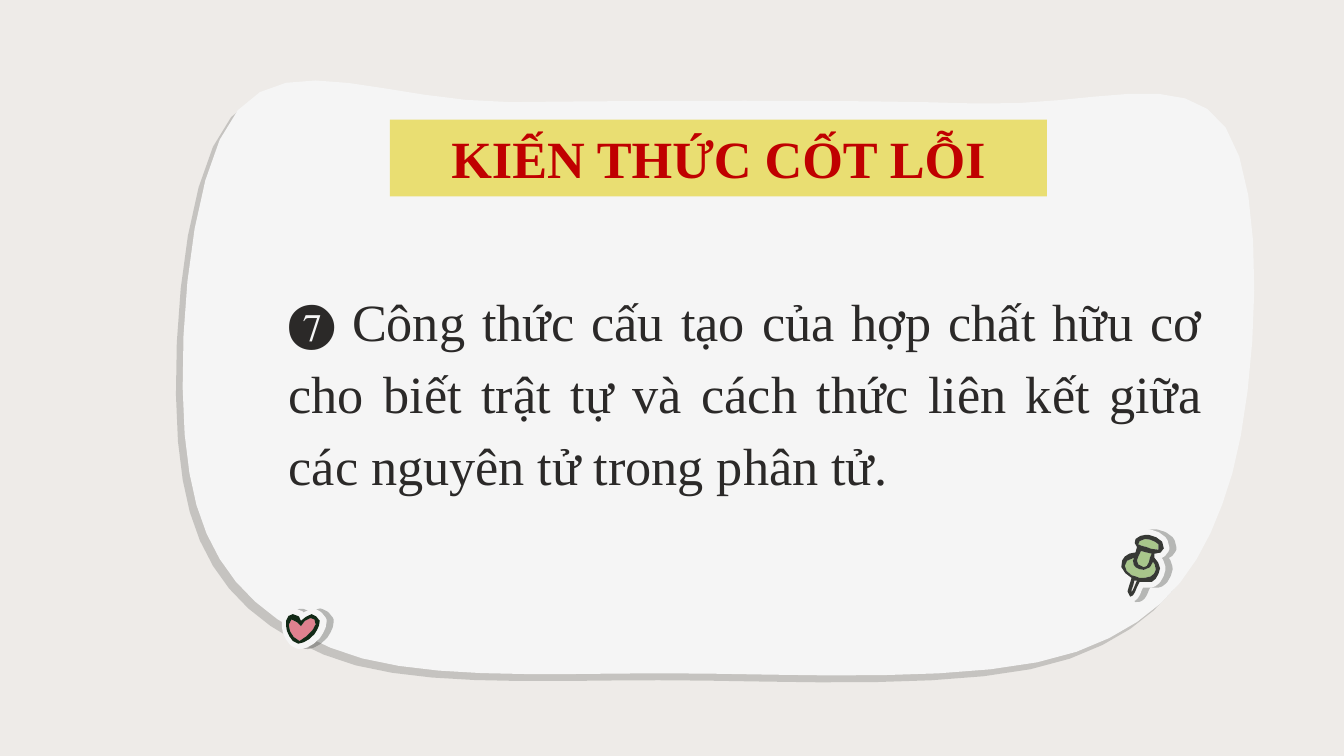
from dataclasses import dataclass
from math import ceil, dist

from lxml import etree
from pptx import Presentation
from pptx.dml.color import RGBColor
from pptx.enum.shapes import MSO_SHAPE
from pptx.enum.text import MSO_ANCHOR, MSO_AUTO_SIZE, PP_ALIGN
from pptx.oxml.ns import qn
from pptx.util import Pt

RECT = MSO_SHAPE.RECTANGLE
MIDDLE = MSO_ANCHOR.MIDDLE
GROW = MSO_AUTO_SIZE.SHAPE_TO_FIT_TEXT
CENTER, JUSTIFY = PP_ALIGN.CENTER, PP_ALIGN.JUSTIFY


@dataclass(frozen=True)
class Theme:
    back: str = "EEEBE8"
    paper: str = "F5F5F5"
    ink: str = "373935"
    green: str = "A8C68B"
    pink: str = "DF818E"
    edge: str = "122916"
    band: str = "E9DE72"
    title: str = "C00000"
    body: str = "2B2928"
    font: str = "Times New Roman"
    size: int = 28


THEME = Theme()
UNIT = 0.72  # points per drawing unit
PIECE = 5    # units per straight piece of a curve
MOST = 8     # pieces per curve at most

# Outlines: a start point, then cubic curves (two handles and an end)
CARD = [
    (141, 352), (152, 419, 187, 457, 246, 482), (305, 507, 403, 501, 495, 501),
    (588, 501, 731, 510, 801, 485), (871, 460, 898, 417, 917, 352),
    (935, 287, 944, 141, 912, 95), (880, 49, 814, 80, 725, 77),
    (637, 74, 472, 75, 380, 76), (289, 76, 217, 36, 177, 82),
    (137, 128, 129, 286, 141, 352),
]
PIN = [
    (20, 0), (18, 0, 15, 1, 13, 3), (12, 5, 12, 7, 14, 9),
    (14, 11, 14, 13, 13, 13), (8, 13, 4, 16, 3, 19), (0, 24, 5, 29, 10, 32),
    (9, 36, 8, 38, 7, 42), (7, 45, 8, 46, 9, 46), (10, 46, 10, 46, 11, 45),
    (13, 43, 13, 40, 16, 35), (18, 35, 22, 35, 25, 35), (27, 34, 29, 32, 30, 29),
    (33, 25, 30, 20, 27, 17), (26, 17, 26, 16, 27, 14), (31, 14, 33, 13, 34, 10),
    (35, 4, 28, 1, 23, 0), (22, 0, 21, 0, 20, 0),
]
DISC = [
    (12, 17), (8, 18, 4, 20, 5, 23), (5, 26, 7, 28, 10, 30),
    (13, 31, 14, 31, 16, 32), (19, 32, 21, 32, 24, 31), (26, 30, 28, 28, 28, 26),
    (28, 22, 27, 22, 26, 20), (25, 23, 23, 26, 19, 26), (16, 26, 15, 25, 13, 24),
    (12, 23, 11, 22, 11, 19), (11, 18, 11, 17, 12, 17),
]
SPIKE = [
    (12, 34), (12, 36, 11, 38, 10, 41), (10, 41, 10, 42, 10, 43),
    (11, 41, 12, 39, 14, 34), (13, 34, 13, 34, 12, 34),
]
CAP = [
    (20, 3), (17, 3, 14, 6, 15, 7), (16, 8, 18, 8, 21, 9),
    (23, 10, 26, 11, 30, 11), (32, 10, 32, 8, 30, 7), (28, 5, 24, 3, 20, 3),
]
NECK = [
    (17, 12), (16, 14, 14, 18, 14, 19), (13, 19, 13, 21, 15, 22),
    (16, 23, 18, 24, 19, 24), (21, 24, 22, 23, 23, 20), (23, 18, 24, 16, 25, 14),
    (23, 13, 19, 13, 17, 12),
]
HEART = [
    (6, 0), (2, 0, 0, 5, 1, 9), (1, 12, 3, 17, 6, 20), (7, 20, 9, 21, 10, 22),
    (11, 22, 13, 22, 14, 21), (16, 21, 20, 17, 22, 15), (24, 12, 26, 9, 26, 5),
    (25, 3, 22, 0, 20, 0), (17, 0, 14, 4, 12, 5), (12, 3, 10, 0, 6, 0),
]
CORE = [
    (19, 3), (17, 3, 16, 3, 15, 5), (14, 6, 13, 8, 12, 9), (11, 9, 10, 7, 9, 6),
    (8, 4, 7, 4, 5, 4), (4, 5, 3, 6, 3, 8), (3, 13, 6, 18, 11, 20),
    (18, 16, 26, 8, 22, 4), (21, 3, 20, 3, 19, 3),
]


def color(code):
    return RGBColor.from_string(code)


def trace(path, left, top):
    """Points along the curves of an outline, without the closing one."""
    x, y = path[0]
    spots = [(x, y)]
    for ax, ay, bx, by, ex, ey in path[1:]:
        steps = min(MOST, ceil(dist((x, y), (ex, ey)) / PIECE))
        for step in range(1, steps + 1):
            t = step / steps
            u = 1 - t
            p, q, r, s = u**3, 3 * u * u * t, 3 * u * t * t, t**3
            spots.append((p * x + q * ax + r * bx + s * ex,
                          p * y + q * ay + r * by + s * ey))
        x, y = ex, ey
    return [(Pt(left + px * UNIT), Pt(top + py * UNIT)) for px, py in spots[:-1]]


def add_shade(shape, alpha, reach, angle):
    effects = shape.element.spPr.find(qn("a:effectLst"))
    outer = etree.SubElement(effects, qn("a:outerShdw"), blurRad="0",
                             dist=str(Pt(reach)), dir=str(angle * 60000),
                             algn="bl", rotWithShape="0")
    tint = etree.SubElement(outer, qn("a:srgbClr"), val=THEME.ink)
    etree.SubElement(tint, qn("a:alpha"), val=str(alpha * 1000))


def add_form(shapes, paths, fill, left=0, top=0, rim=0):
    """Closed outline; any further paths are holes in it."""
    first, *holes = [trace(path, left, top) for path in paths]
    pen = shapes.build_freeform(*first[0], scale=1.0)
    pen.add_line_segments(first[1:], close=True)
    for hole in holes:
        pen.move_to(*hole[0])
        pen.add_line_segments(hole[1:], close=True)
    form = pen.convert_to_shape()
    form.shadow.inherit = False
    form.fill.solid()
    form.fill.fore_color.rgb = color(fill)
    if rim:
        form.line.color.rgb = color(THEME.paper)
        form.line.width = Pt(rim)
    else:
        form.line.fill.background()
    return form


def add_sticker(slide, rim, parts, ink, left, top, shift=0):
    """Pale rim with a shadow, coloured parts, then the ink around them."""
    group = slide.shapes.add_group_shape().shapes
    base = add_form(group, [rim], THEME.back, left + shift, top, rim=6)
    add_shade(base, 32, 3.8, 0)
    for path, fill in parts:
        add_form(group, [path], fill, left, top)
    holes = [path for path, _ in parts]
    add_form(group, [rim, *holes], ink, left, top)


def write(shape, text, tint, align, bold=False, space=None):
    frame = shape.text_frame
    frame.word_wrap = True
    frame.auto_size = GROW
    para = frame.paragraphs[0]
    para.alignment = align
    if space:
        para.line_spacing = space
    run = para.add_run()
    run.text = text
    run.font.name, run.font.size = THEME.font, Pt(THEME.size)
    run.font.bold = bold
    run.font.color.rgb = color(tint)


def main():
    deck = Presentation()
    deck.slide_width, deck.slide_height = Pt(720), Pt(405)
    slide = deck.slides.add_slide(deck.slide_layouts[6])
    slide.background.fill.solid()
    slide.background.fill.fore_color.rgb = color(THEME.back)

    # Paper card
    card = add_form(slide.shapes, [CARD], THEME.paper)
    add_shade(card, 22, 5.2, 134)

    # Pin and heart stickers
    pin = [(DISC, THEME.green), (SPIKE, THEME.back),
           (CAP, THEME.green), (NECK, THEME.green)]
    add_sticker(slide, PIN, pin, THEME.ink, 599, 286.6)
    add_sticker(slide, HEART, [(CORE, THEME.pink)], THEME.edge, 152.6, 329, 0.7)

    # Key statement
    body = slide.shapes.add_textbox(Pt(147.6), Pt(146.2), Pt(503.3), Pt(121))
    write(body, "❼ Công thức cấu tạo của hợp chất hữu cơ cho biết trật tự và "
          "cách thức liên kết giữa các nguyên tử trong phân tử.",
          THEME.body, JUSTIFY, space=1.15)

    # Title band
    band = slide.shapes.add_shape(RECT, Pt(208.8), Pt(64.1), Pt(352.1), Pt(41.2))
    band.shadow.inherit = False
    band.fill.solid()
    band.fill.fore_color.rgb = color(THEME.band)
    band.line.fill.background()
    band.text_frame.vertical_anchor = MIDDLE
    write(band, "KIẾN THỨC CỐT LỖI", THEME.title, CENTER, bold=True)

    deck.save("out.pptx")


if __name__ == "__main__":
    main()
